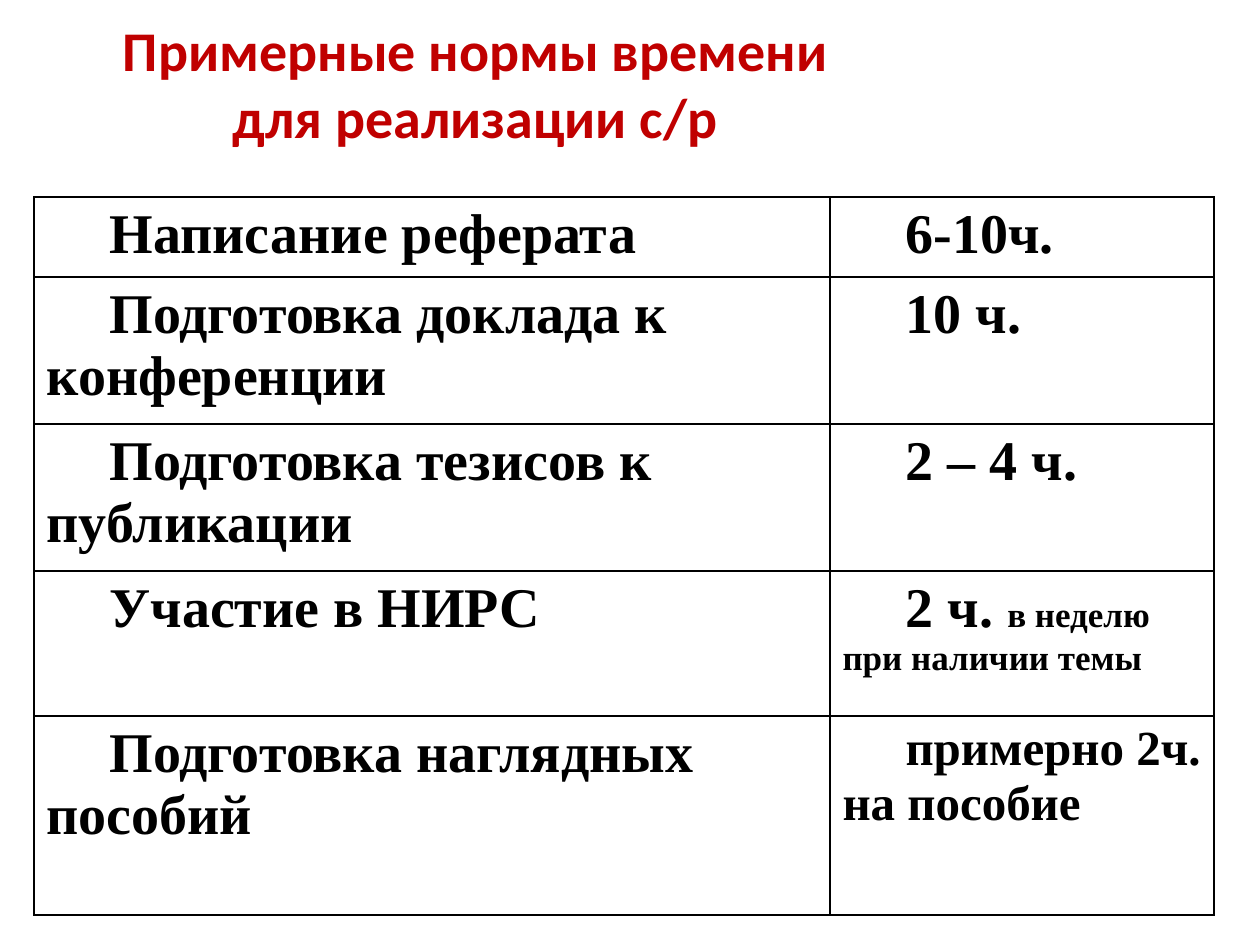
from lxml.etree import SubElement
from pptx import Presentation
from pptx.dml.color import RGBColor
from pptx.enum.text import MSO_ANCHOR, PP_ALIGN
from pptx.oxml.ns import qn
from pptx.util import Pt

PX = 914400 // 126
TITLE = "Примерные нормы времени для реализации с/р"
TITLE_BOX = (63, 0, 825, 165)
TABLE_ORIGIN = (34, 197)
COLUMN_WIDTHS = [796, 384]
# Row height, then one list of (text, size) runs per cell
ROWS = [
    (79, [("Написание реферата", 32)], [("6-10ч.", 32)]),
    (147, [("Подготовка доклада к конференции", 32)], [("10 ч.", 32)]),
    (147, [("Подготовка тезисов к публикации", 32)], [("2 – 4 ч.", 32)]),
    (145, [("Участие в НИРС", 32)],
     [("2 ч. ", 32), ("в неделю при наличии темы", 20)]),
    (199, [("Подготовка наглядных пособий", 32)],
     [("примерно 2ч. на пособие", 28)]),
]
FIRST_LINE_INDENT = 63
RED, BLACK = "C00000", "000000"


def px(value):
    return value * PX


def color(value):
    return RGBColor.from_string(value)


def add_text(paragraph, text, size=32, font="Times New Roman", fill=BLACK):
    run = paragraph.add_run()
    run.text = text
    run.font.size = Pt(size)
    run.font.name = font
    run.font.bold = True
    run.font.color.rgb = color(fill)


def add_borders(cell, fill=BLACK, width=1):
    properties = cell._tc.get_or_add_tcPr()
    for position, side in enumerate(("lnL", "lnR", "lnT", "lnB")):
        line = SubElement(properties, qn(f"a:{side}"), w=str(Pt(width)))
        solid = SubElement(line, qn("a:solidFill"))
        SubElement(solid, qn("a:srgbClr"), val=fill)
        properties.remove(line)
        properties.insert(position, line)  # borders precede the cell fill


def add_title(slide):
    frame = slide.shapes.add_textbox(*map(px, TITLE_BOX)).text_frame
    frame.word_wrap = True
    frame.vertical_anchor = MSO_ANCHOR.MIDDLE
    paragraph = frame.paragraphs[0]
    paragraph.alignment = PP_ALIGN.CENTER
    add_text(paragraph, TITLE, font="Calibri", fill=RED)


def add_hours_table(slide):
    size = (sum(COLUMN_WIDTHS), sum(row[0] for row in ROWS))
    table = slide.shapes.add_table(
        len(ROWS), len(COLUMN_WIDTHS), *map(px, TABLE_ORIGIN + size)).table
    table.first_row = table.horz_banding = False
    for column, width in zip(table.columns, COLUMN_WIDTHS):
        column.width = px(width)
    for row, (height, *contents) in zip(table.rows, ROWS):
        row.height = px(height)
        for cell, runs in zip(row.cells, contents):
            cell.fill.background()
            add_borders(cell)
            paragraph = cell.text_frame.paragraphs[0]
            paragraph._p.get_or_add_pPr().set("indent", str(px(FIRST_LINE_INDENT)))
            for text, text_size in runs:
                add_text(paragraph, text, size=text_size)


def main():
    presentation = Presentation()
    presentation.slide_width, presentation.slide_height = px(1260), px(945)
    slide = presentation.slides.add_slide(presentation.slide_layouts[6])
    add_title(slide)
    add_hours_table(slide)
    presentation.save("out.pptx")


if __name__ == "__main__":
    main()
